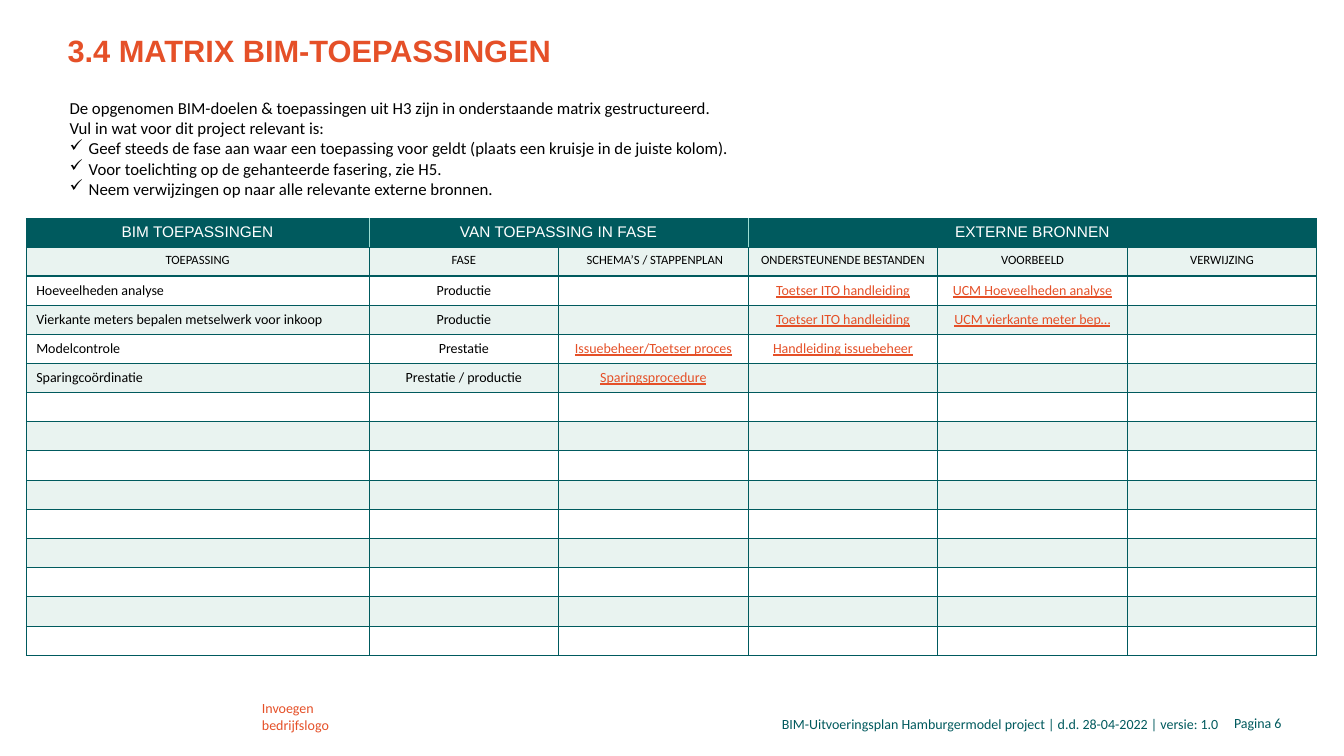
from lxml import etree
from pptx import Presentation
from pptx.dml.color import RGBColor
from pptx.enum.text import MSO_ANCHOR, PP_ALIGN
from pptx.oxml.ns import qn
from pptx.util import Inches, Pt

TEAL = RGBColor(0x00, 0x5A, 0x5E)
MINT = RGBColor(0x9D, 0xDE, 0xD3)
PALE = RGBColor(0xE9, 0xF3, 0xF0)
ORANGE = RGBColor(0xE5, 0x50, 0x28)
WHITE = RGBColor(0xFF, 0xFF, 0xFF)
BLACK = RGBColor(0x00, 0x00, 0x00)
LEFT, CENTER, RIGHT = PP_ALIGN.LEFT, PP_ALIGN.CENTER, PP_ALIGN.RIGHT
TOP, MIDDLE = MSO_ANCHOR.TOP, MSO_ANCHOR.MIDDLE

INTRO = [
    "De opgenomen BIM-doelen & toepassingen uit H3 zijn in onderstaande matrix gestructureerd.",
    "Vul in wat voor dit project relevant is:",
]
CHECKS = [
    "Geef steeds de fase aan waar een toepassing voor geldt (plaats een kruisje in de juiste kolom).",
    "Voor toelichting op de gehanteerde fasering, zie H5.",
    "Neem verwijzingen op naar alle relevante externe bronnen.",
]
GROUPS = [(0, 1, "BIM TOEPASSINGEN"), (1, 2, "VAN TOEPASSING IN FASE"),
          (3, 3, "EXTERNE BRONNEN")]
HEADS = ["TOEPASSING", "FASE", " SCHEMA’S / STAPPENPLAN",
         "ONDERSTEUNENDE BESTANDEN", "VOORBEELD", "VERWIJZING"]
USES = [
    ["Hoeveelheden analyse", "Productie", "", "Toetser ITO handleiding",
     "UCM Hoeveelheden analyse", ""],
    ["Vierkante meters bepalen metselwerk voor inkoop", "Productie", "",
     "Toetser ITO handleiding", "UCM vierkante meter bep…", ""],
    ["Modelcontrole", "Prestatie", "Issuebeheer/Toetser proces",
     "Handleiding issuebeheer", "", ""],
    ["Sparingcoördinatie", "Prestatie / productie", "Sparingsprocedure", "", "", ""],
]
ROWS = 13
TALL = (6, 11)
WIDTHS = [3.4] + [1.88] * 5


def style(par, size, color, align=LEFT, name="Calibri"):
    par.alignment = align
    par.font.size = Pt(size)
    par.font.name = name
    par.font.color.rgb = color


def dress(cell, fill, left=TEAL, right=TEAL):
    """Draw the cell's four borders, then its fill."""
    props = cell._tc.get_or_add_tcPr()
    for side, color in (("L", left), ("R", right), ("T", TEAL), ("B", TEAL)):
        line = etree.SubElement(props, qn("a:ln" + side), w=str(Pt(0.75)))
        solid = etree.SubElement(line, qn("a:solidFill"))
        etree.SubElement(solid, qn("a:srgbClr"), val=str(color))
    cell.fill.solid()
    cell.fill.fore_color.rgb = fill


prs = Presentation()
prs.slide_width, prs.slide_height = Inches(13.33), Inches(7.5)
slide = prs.slides.add_slide(prs.slide_layouts[5])

title = slide.shapes.title
title.left, title.top = Inches(0.67), Inches(0.26)
title.width, title.height = Inches(5.81), Inches(0.47)
title.text_frame.margin_left = 0
title.text_frame.text = "3.4 MATRIX BIM-TOEPASSINGEN"
style(title.text_frame.paragraphs[0], 22, ORANGE, name="Arial")
title.text_frame.paragraphs[0].font.bold = True

# Text boxes: place, side margin, top margin, anchor, alignment, colour, size, lines
BOXES = [
    ((0.69, 0.97, 7.36, 1.01), 0, 0, TOP, LEFT, BLACK, 12, INTRO + CHECKS),
    ((2.5, 6.89, 1.14, 0.44), 0.1, 0.05, TOP, LEFT, ORANGE, 10,
     ["Invoegen", "bedrijfslogo"]),
    ((6.77, 7.05, 5.41, 0.27), 0.1, 0.05, TOP, RIGHT, TEAL, 10,
     ["BIM-Uitvoeringsplan Hamburgermodel project | d.d. 28-04-2022 | versie: 1.0"]),
    ((12.07, 7.04, 0.54, 0.27), 0, 0.05, TOP, RIGHT, TEAL, 10, ["Pagina"]),
    ((12.61, 7.03, 0.44, 0.28), 0, 0.05, MIDDLE, LEFT, TEAL, 10, [" 6"]),
]
for place, side, edge, anchor, align, color, size, lines in BOXES:
    frame = slide.shapes.add_textbox(*map(Inches, place)).text_frame
    frame.word_wrap = True
    frame.vertical_anchor = anchor
    frame.margin_left = frame.margin_right = Inches(side)
    frame.margin_top = frame.margin_bottom = Inches(edge)
    frame.text = "\n".join(lines)
    for par in frame.paragraphs:
        if par.text in CHECKS:
            props = par._p.get_or_add_pPr()
            props.set("marL", str(Inches(0.19)))
            props.set("indent", str(-Inches(0.19)))
            etree.SubElement(props, qn("a:buChar"), char="✓")
        style(par, size, color, align)

# Table head and body share the same columns
low = (3.77 - 0.3 * len(TALL)) / (ROWS - len(TALL))
heights = [0.3 if row in TALL else low for row in range(ROWS)]
tables = []
for top, sizes in ((2.17, [0.28, 0.28]), (2.74, heights)):
    table = slide.shapes.add_table(len(sizes), len(WIDTHS), Inches(0.26), Inches(top),
                                   Inches(sum(WIDTHS)), Inches(sum(sizes))).table
    table.first_row = table.horz_banding = False
    for col, width in zip(table.columns, WIDTHS):
        col.width = Inches(width)
    for row, height in zip(table.rows, sizes):
        row.height = Inches(height)
    tables.append(table)
head, body = tables

for start, span, text in GROUPS:
    end = start + span - 1
    for col in range(start, end + 1):
        dress(head.cell(0, col), TEAL, MINT if start else TEAL,
              MINT if end < len(WIDTHS) - 1 else TEAL)
    cell = head.cell(0, start)
    if span > 1:
        cell.merge(head.cell(0, end))
    cell.text = text
    style(cell.text_frame.paragraphs[0], 11, WHITE, CENTER, "Arial")
for col, text in enumerate(HEADS):
    cell = head.cell(1, col)
    dress(cell, PALE)
    cell.text = text
    style(cell.text_frame.paragraphs[0], 9, BLACK, CENTER)

for row in range(ROWS):
    texts = USES[row] if row < len(USES) else [""] * len(WIDTHS)
    for col, text in enumerate(texts):
        cell = body.cell(row, col)
        dress(cell, PALE if row % 2 else WHITE)
        cell.vertical_anchor = MIDDLE
        cell.margin_top = cell.margin_bottom = Inches(0.05)
        cell.text = text
        par = cell.text_frame.paragraphs[0]
        link = col > 1
        style(par, 10, ORANGE if link else BLACK, CENTER if col else LEFT)
        par.font.underline = link
        if not text:
            etree.SubElement(par._p, qn("a:endParaRPr"), sz="1000")

prs.save("out.pptx")
